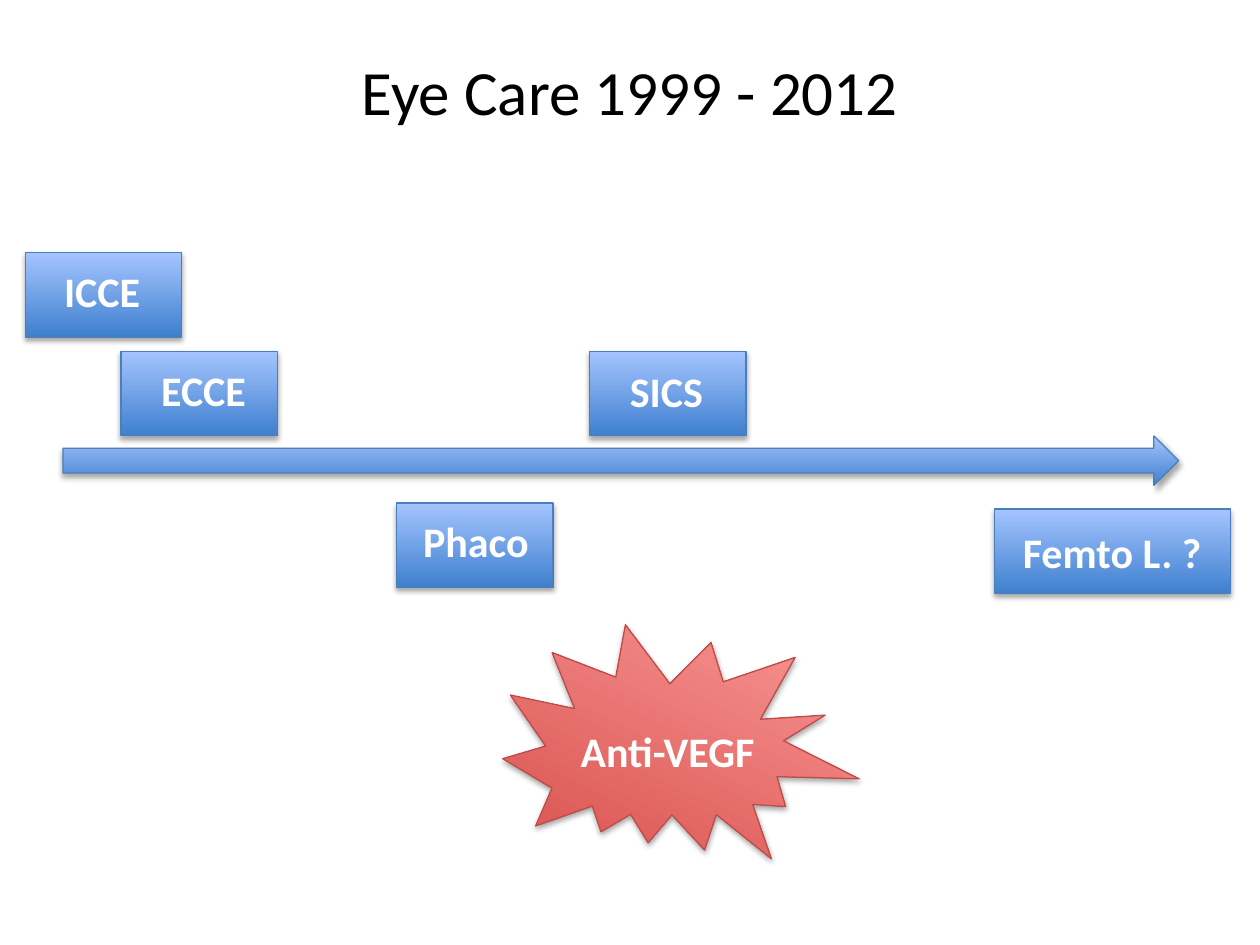
from dataclasses import dataclass

from lxml.etree import SubElement
from pptx import Presentation
from pptx.dml.color import RGBColor
from pptx.enum.shapes import MSO_SHAPE
from pptx.enum.text import MSO_ANCHOR, PP_ALIGN
from pptx.oxml.ns import qn
from pptx.shapes.autoshape import Shape
from pptx.slide import Slide
from pptx.util import Pt

BLACK = RGBColor(0x00, 0x00, 0x00)
WHITE = RGBColor(0xFF, 0xFF, 0xFF)


@dataclass(frozen=True)
class Palette:
    dark: RGBColor
    light: RGBColor
    line: RGBColor


@dataclass(frozen=True)
class Milestone:
    text: str
    left: float
    top: float
    label_dx: float  # label offset from the box corner
    label_dy: float
    label_width: float
    width: float = 89.3
    height: float = 48.2


BLUE = Palette(RGBColor(0x3F, 0x80, 0xCE), RGBColor(0xA4, 0xC4, 0xFF),
               RGBColor(0x4B, 0x7E, 0xBC))
RED = Palette(RGBColor(0xD1, 0x40, 0x3C), RGBColor(0xFF, 0xA6, 0xA5),
              RGBColor(0xBF, 0x4C, 0x48))

TITLE_FONT = {"name": "Calibri", "size": Pt(36), "bold": False}
LABEL_FONT = {"name": "Calibri", "size": Pt(24), "bold": True}

MILESTONES = [
    Milestone("ICCE", 14.4, 144.4, 15.1, 4, 58.3),
    Milestone("ECCE", 69.1, 200.9, 15.9, 3.6, 64.1),
    Milestone("SICS", 337, 200.9, 15.8, 4.3, 56.9),
    Milestone("Phaco", 226.8, 287.5, 7.9, 3.6, 75.6),
    Milestone("Femto L. ?", 568.5, 290.9, 8.9, 6.5, 118.1, width=134.6),
]


def add_shadow(sp: Shape) -> None:
    """Soft shadow straight below the shape."""
    effects = SubElement(sp._element.spPr, qn("a:effectLst"))
    shadow = SubElement(effects, qn("a:outerShdw"), blurRad=str(Pt(3.1)),
                        dist=str(Pt(1.8)), dir="5400000", rotWithShape="0")
    color = SubElement(shadow, qn("a:srgbClr"), val="000000")
    SubElement(color, qn("a:alpha"), val="35000")


def add_glossy(s: Slide, kind: MSO_SHAPE, left: float, top: float,
               width: float, height: float, palette: Palette) -> Shape:
    sp = s.shapes.add_shape(kind, Pt(left), Pt(top), Pt(width), Pt(height))
    sp.fill.gradient()
    sp.fill.gradient_angle = 90
    for stop, color in zip(sp.fill.gradient_stops, (palette.dark, palette.light)):
        stop.color.rgb = color
    sp.line.color.rgb = palette.line
    sp.line.width = Pt(0.75)
    add_shadow(sp)
    return sp


def add_text(s: Slide, text: str, left: float, top: float, width: float,
             height: float, font: dict, color: RGBColor, wrap: bool = False,
             align: PP_ALIGN = PP_ALIGN.LEFT,
             anchor: MSO_ANCHOR = MSO_ANCHOR.TOP) -> None:
    tf = s.shapes.add_textbox(Pt(left), Pt(top), Pt(width), Pt(height)).text_frame
    tf.word_wrap = wrap
    tf.vertical_anchor = anchor
    p = tf.paragraphs[0]
    p.alignment = align
    r = p.add_run()
    r.text = text
    for name, value in font.items():
        setattr(r.font, name, value)
    r.font.color.rgb = color


def add_label(s: Slide, text: str, left: float, top: float, width: float) -> None:
    add_text(s, text, left, top, width, 36.4, LABEL_FONT, WHITE)


def add_milestone(s: Slide, m: Milestone) -> None:
    add_glossy(s, MSO_SHAPE.FLOWCHART_PROCESS, m.left, m.top, m.width, m.height, BLUE)
    add_label(s, m.text, m.left + m.label_dx, m.top + m.label_dy, m.label_width)


def main() -> None:
    prs = Presentation()
    prs.slide_width, prs.slide_height = Pt(720), Pt(540)
    s = prs.slides.add_slide(prs.slide_layouts[6])

    # Title
    add_text(s, "Eye Care 1999 - 2012", 36, 21.6, 648, 60, TITLE_FONT, BLACK,
             wrap=True, align=PP_ALIGN.CENTER, anchor=MSO_ANCHOR.MIDDLE)

    # Timeline
    add_glossy(s, MSO_SHAPE.RIGHT_ARROW, 36, 249.1, 637.5, 28.3, BLUE)
    for m in MILESTONES:
        add_milestone(s, m)

    # Burst
    sp = add_glossy(s, MSO_SHAPE.EXPLOSION2, 288, 352.1, 200.2, 151.2, RED)
    sp.rotation = 25.8
    add_label(s, "Anti-VEGF", 324.7, 411.1, 116.6)

    prs.save("out.pptx")


if __name__ == "__main__":
    main()
